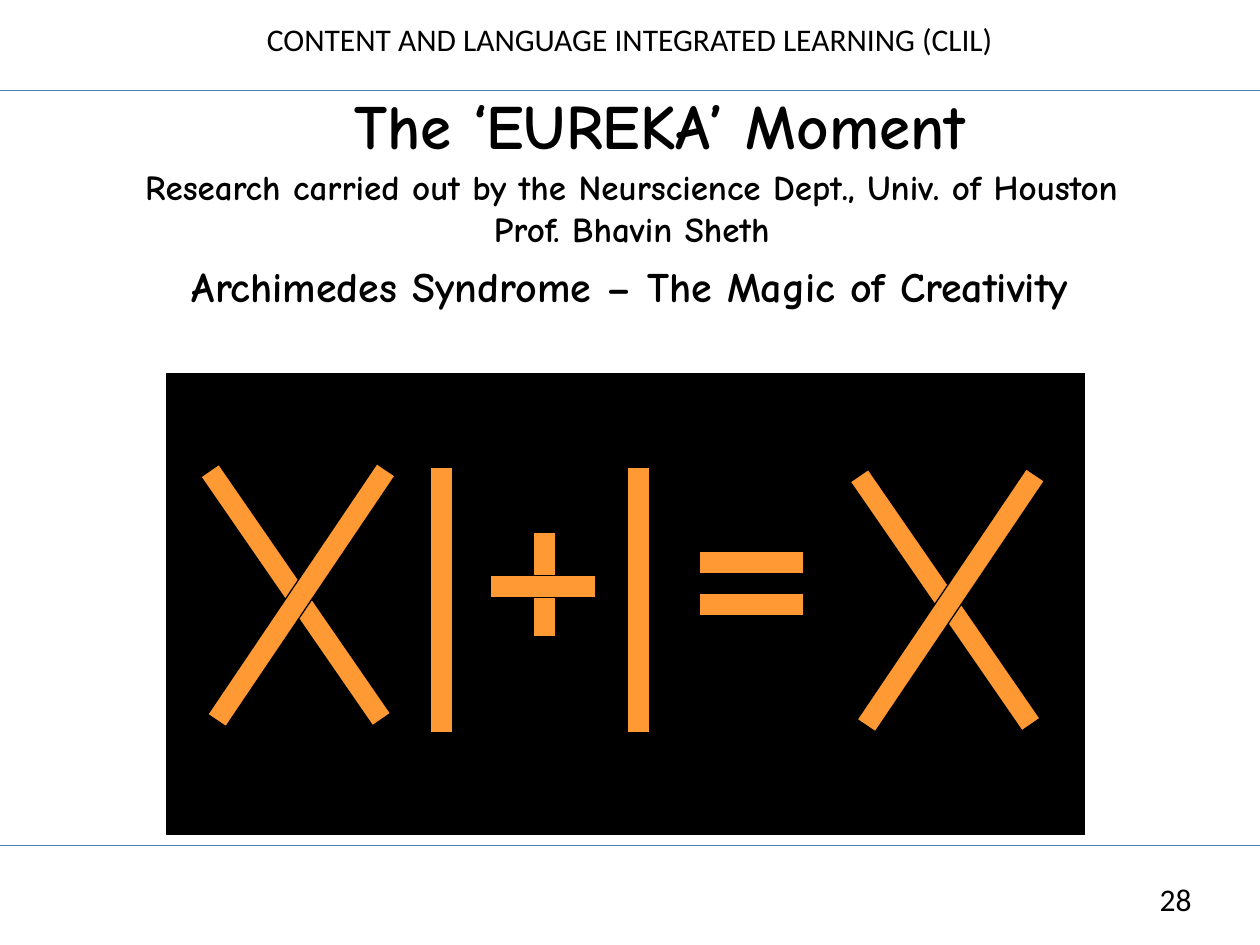
from dataclasses import dataclass

from pptx import Presentation
from pptx.dml.color import RGBColor
from pptx.enum.shapes import MSO_CONNECTOR as Connector, MSO_SHAPE as Shape
from pptx.enum.text import MSO_ANCHOR as Anchor, PP_ALIGN as Align
from pptx.oxml.ns import qn
from pptx.util import Inches, Pt
from lxml.etree import SubElement

COLOURS = {"ink": "000000", "rule": "4B7EBC", "panel": "000000", "stick": "FF9933"}
PLAIN = {"name": "Calibri", "bold": False}
COMIC = {"name": "Comic Neue", "bold": True}


@dataclass
class Box:
    left: float
    top: float
    width: float
    height: float

    def inner(self, left, top, width, height):
        """Return an inner box, given in percent of this one."""
        return Box(self.left + self.width * left / 100,
                   self.top + self.height * top / 100,
                   self.width * width / 100,
                   self.height * height / 100)

    def place(self):
        return [Inches(n) for n in (self.left, self.top, self.width, self.height)]


def colour(name):
    return RGBColor.from_string(COLOURS[name])


def write(shape, box, lines, size, look):
    """Put centred lines of one paragraph into a text shape."""
    shape.left, shape.top, shape.width, shape.height = box.place()
    frame = shape.text_frame
    frame.word_wrap = True
    frame.vertical_anchor = Anchor.TOP
    para = frame.paragraphs[0]
    para.alignment = Align.CENTER
    para.space_before = Pt(0)
    for number, line in enumerate(lines):
        if number:
            para.add_line_break()
        span = para.add_run()
        span.text = line
        for key, value in {**look, "size": Pt(size)}.items():
            setattr(span.font, key, value)
        span.font.color.rgb = colour("ink")


def add_text(page, box, line, size, look):
    write(page.shapes.add_textbox(*box.place()), box, [line], size, look)


def add_bar(page, box, fill, angle=0):
    bar = page.shapes.add_shape(Shape.RECTANGLE, *box.place())
    bar.shadow.inherit = False
    bar.rotation = angle
    bar.fill.solid()
    bar.fill.fore_color.rgb = colour(fill)
    bar.line.color.rgb = colour("panel")
    bar.line.width = Pt(0.75)


def add_frame(page, box):
    """Running head, page number and the two rules."""
    add_text(page, box.inner(16.1, 1.5, 67.8, 5.3),
             "CONTENT AND LANGUAGE INTEGRATED LEARNING (CLIL)", 18, PLAIN)
    add_text(page, box.inner(86.9, 92.5, 12.8, 5.3), "28", 18, PLAIN)
    for row in (9.6, 89.5):
        left, top, width, _ = box.inner(0, row, 100, 0).place()
        rule = page.shapes.add_connector(Connector.STRAIGHT, left, top, left + width, top)
        rule.line.color.rgb = colour("rule")
        rule.line.width = Pt(0.75)
        SubElement(rule._element.spPr, qn("a:effectLst"))


def add_headings(page, box):
    title, subtitle = page.placeholders
    write(title, box.inner(16.5, 8.5, 71.7, 9.3), ["The ‘EUREKA’ Moment"], 36, COMIC)
    write(subtitle, box.inner(3.3, 16.8, 93.7, 10.3),
          ["Research carried out by the Neurscience Dept., Univ. of Houston",
           "Prof. Bhavin Sheth"], 20, COMIC)
    add_text(page, box.inner(0, 26.9, 100, 6.7),
             "Archimedes Syndrome – The Magic of Creativity", 24, COMIC)


def add_puzzle(page, box):
    """Matchstick equation: XI + I = X on a dark panel."""
    add_bar(page, box, "panel")
    diagonal, upright, short = 65.6, 57.4, 22.7
    thickness = 2.4
    # Centre column, centre row, length and angle of each stick
    sticks = [
        (14.1, 48.1, diagonal, 325.4), (14.7, 48.1, diagonal, 214),
        (30, 49.2, upright, 0),
        (41.2, 45.8, short, 0), (41, 46.3, short, 90),
        (51.4, 49.2, upright, 0),
        (63.7, 41.1, short, 90), (63.7, 50.1, short, 90),
        (84.8, 49.2, diagonal, 325.4), (85.4, 49.2, diagonal, 214),
    ]
    for column, row, length, angle in sticks:
        stick = box.inner(column - thickness / 2, row - length / 2, thickness, length)
        add_bar(page, stick, "stick", angle)


def main():
    deck = Presentation()
    deck.slide_width, deck.slide_height = Inches(10), Inches(7.5)
    page = deck.slides.add_slide(deck.slide_layouts[0])
    whole = Box(0, 0, 10, 7.5)
    add_frame(page, whole)
    add_headings(page, whole)
    add_puzzle(page, whole.inner(13.2, 39.5, 72.9, 48.8))
    deck.save("out.pptx")


if __name__ == "__main__":
    main()
